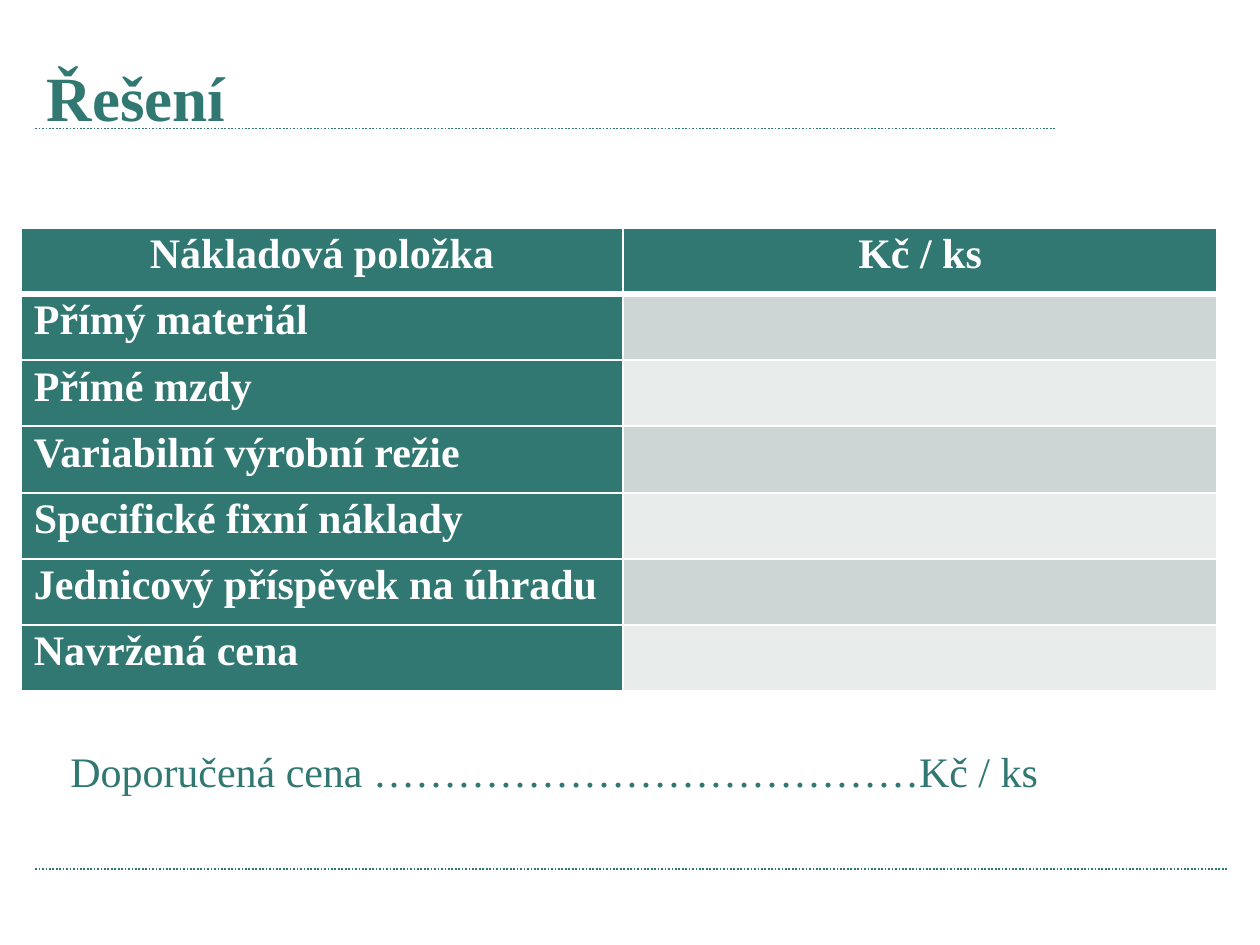
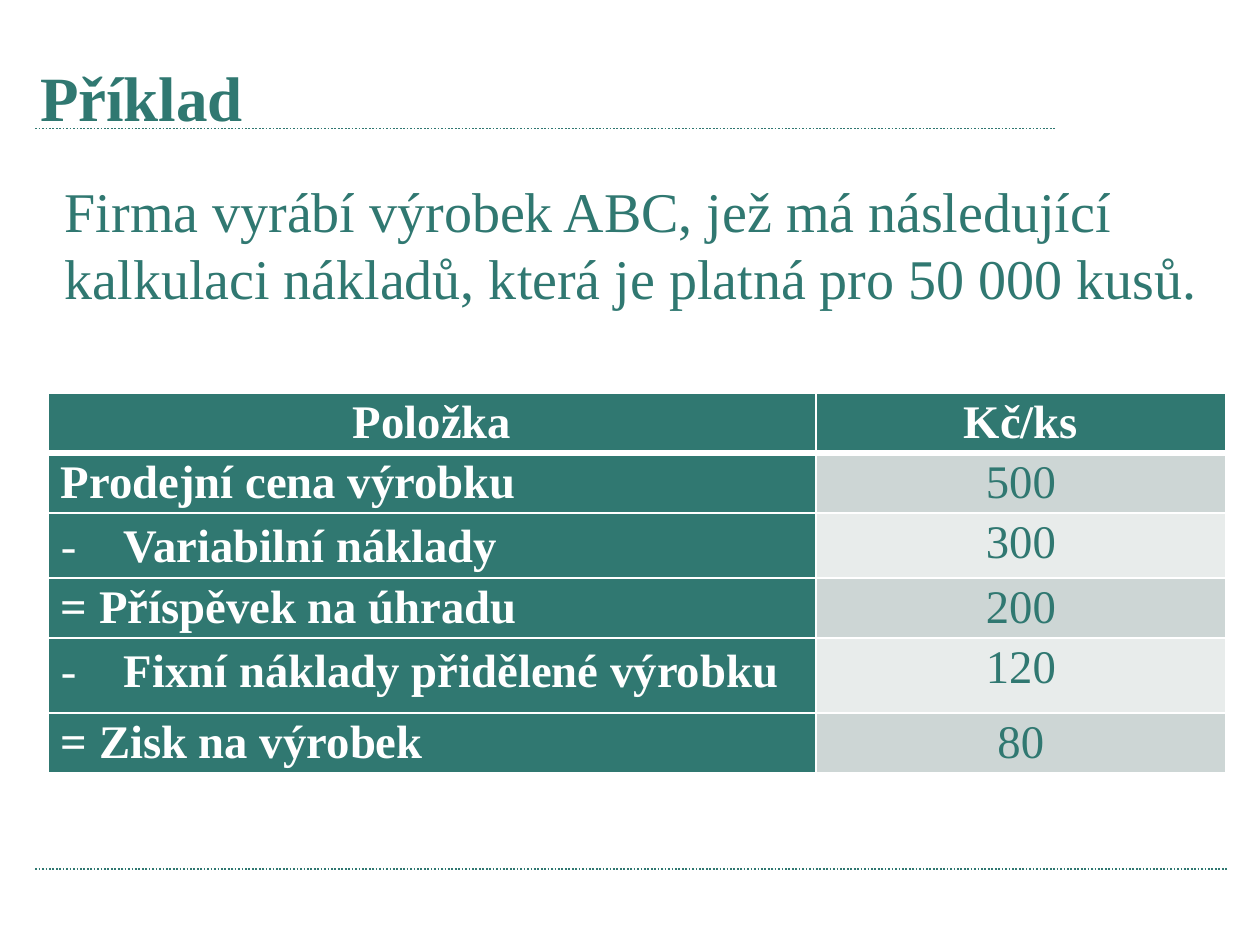
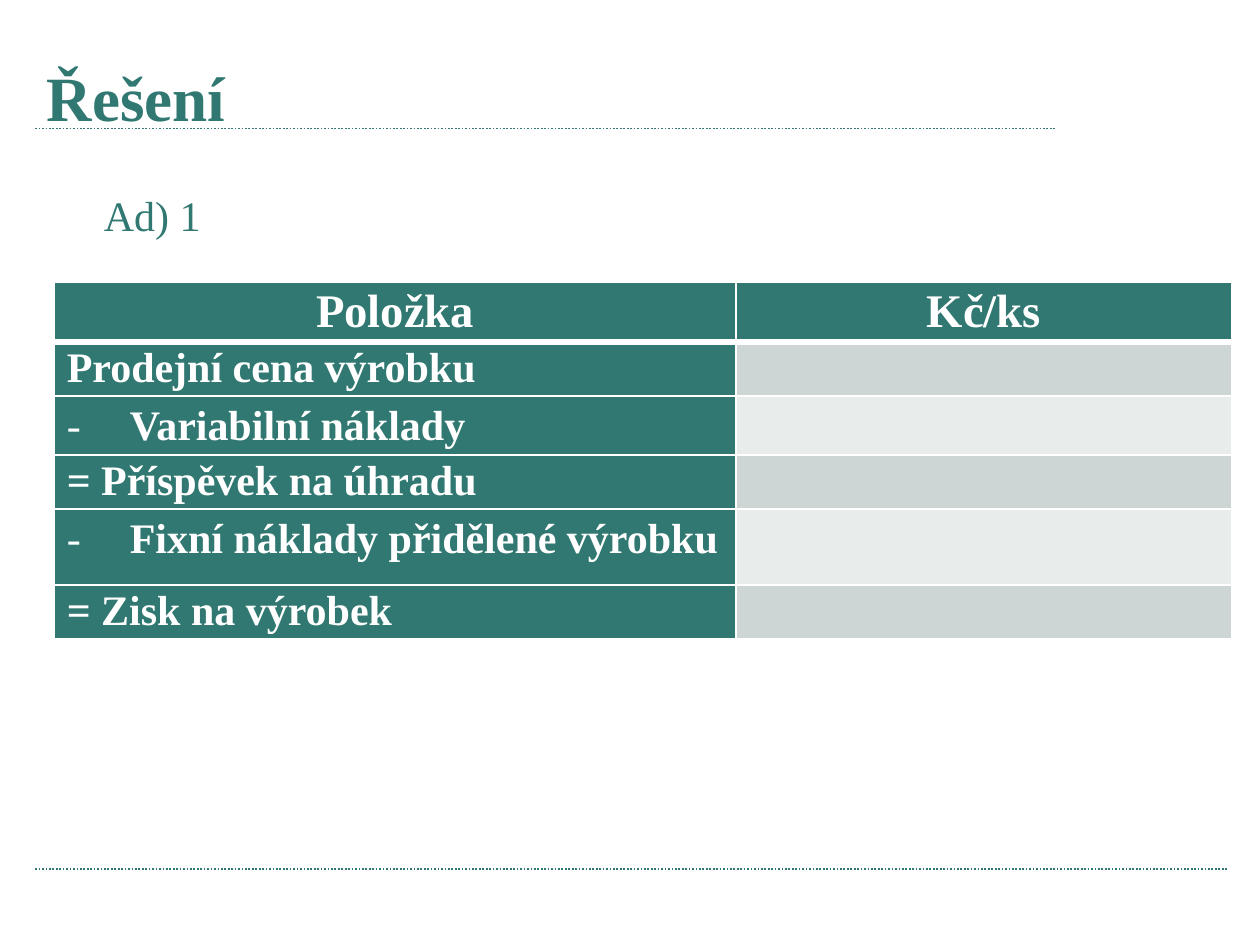
import dataclasses

import lxml.etree
import pptx
import pptx.dml.color
import pptx.enum.dml
import pptx.enum.shapes
import pptx.enum.text
import pptx.oxml.ns
import pptx.util

ALIGN = pptx.enum.text.PP_ALIGN
ANCHOR = pptx.enum.text.MSO_ANCHOR


@dataclasses.dataclass(frozen=True)
class Theme:
    font: str = "Times New Roman"
    teal: str = "307871"
    white: str = "FFFFFF"
    bands: tuple = ("CDD6D5", "E8ECEB")
    title_size: int = 27
    lead_size: int = 24
    large_size: int = 20
    body_size: int = 18
    rule_width: float = 0.75
    border_width: int = 1
    header_border_width: int = 3
    body_spacing: float = 1.0
    cell_spacing: float = 1.07
    bullet_spacing: float = 1.15
    bullet_indent: float = 3.75
    cell_margin: float = 0.75


class Deck:
    """Draws slides in one style on a grid of 75 columns by 56.25 rows."""

    columns, rows, step = 75, 56.25, 0.1

    def __init__(self, theme):
        self.theme = theme
        self.presentation = pptx.Presentation()
        self.presentation.slide_width = self.grid(self.columns)
        self.presentation.slide_height = self.grid(self.rows)
        self.slide = None

    def grid(self, count):
        return pptx.util.Inches(count * self.step)

    def color(self, value):
        return pptx.dml.color.RGBColor.from_string(value)

    def add_slide(self, title, title_left):
        self.slide = self.presentation.slides.add_slide(self.presentation.slide_layouts[6])
        self.rule(2.1, 62.9, 7.65)
        self.rule(2.1, 73.1, 51.75)
        self.text(title, title_left, 2.55, 66.1, 5.9, self.theme.title_size,
                  bold=True, anchor=ANCHOR.BOTTOM)

    def rule(self, left, right, top):
        line = self.slide.shapes.add_connector(
            pptx.enum.shapes.MSO_CONNECTOR.STRAIGHT,
            self.grid(left), self.grid(top), self.grid(right), self.grid(top))
        line.line.color.rgb = self.color(self.theme.teal)
        line.line.width = pptx.util.Pt(self.theme.rule_width)
        line.line.dash_style = pptx.enum.dml.MSO_LINE.ROUND_DOT
        properties = line._element.spPr
        lxml.etree.SubElement(properties, pptx.oxml.ns.qn("a:effectLst"))

    def style(self, paragraph, size, color, bold, spacing, alignment):
        paragraph.alignment = alignment
        paragraph.line_spacing = spacing
        for run in paragraph.runs:
            run.font.name = self.theme.font
            run.font.size = pptx.util.Pt(size)
            run.font.bold = bold
            run.font.color.rgb = self.color(color)

    def text(self, content, left, top, width, height, size, bold=False, anchor=ANCHOR.TOP):
        box = self.slide.shapes.add_textbox(*map(self.grid, (left, top, width, height)))
        frame = box.text_frame
        frame.word_wrap = True
        frame.vertical_anchor = anchor
        frame.text = content
        self.style(frame.paragraphs[0], size, self.theme.teal, bold,
                   self.theme.body_spacing, ALIGN.LEFT)

    def table(self, left, top, widths, heights, records, header_size, body_size,
              label_alignment=ALIGN.LEFT):
        frame = self.slide.shapes.add_table(
            len(heights), len(widths), self.grid(left), self.grid(top),
            self.grid(sum(widths)), self.grid(sum(heights)))
        table = frame.table
        for column, width in zip(table.columns, widths):
            column.width = self.grid(width)
        for row, height in zip(table.rows, heights):
            row.height = self.grid(height)
        for row_index, record in enumerate(records):
            header = row_index == 0
            size = header_size if header else body_size
            for column_index, content in enumerate(record):
                label = column_index == 0
                strong = header or label
                alignment = label_alignment if label and not header else ALIGN.CENTER
                cell = table.cell(row_index, column_index)
                self.borders(cell, row_index)
                cell.fill.solid()
                cell.fill.fore_color.rgb = self.color(
                    self.theme.teal if strong else self.theme.bands[(row_index - 1) % 2])
                self.fill_cell(cell, content, size, strong, alignment)

    def fill_cell(self, cell, content, size, strong, alignment):
        cell.margin_left = cell.margin_right = self.grid(self.theme.cell_margin)
        cell.margin_top = cell.margin_bottom = 0
        bulleted = content.startswith("- ")
        cell.text_frame.text = content.removeprefix("- ")
        paragraph = cell.text_frame.paragraphs[0]
        if bulleted:
            self.bullet(paragraph)
        self.style(paragraph, size, self.theme.white if strong else self.theme.teal, strong,
                   self.theme.bullet_spacing if bulleted else self.theme.cell_spacing, alignment)

    def bullet(self, paragraph):
        properties = paragraph._p.get_or_add_pPr()
        indent = self.grid(self.theme.bullet_indent)
        properties.set("marL", str(indent))
        properties.set("indent", str(-indent))
        lxml.etree.SubElement(properties, pptx.oxml.ns.qn("a:buFont"), typeface=self.theme.font)
        lxml.etree.SubElement(properties, pptx.oxml.ns.qn("a:buChar"), char="-")

    def borders(self, cell, row_index):
        properties = cell._tc.get_or_add_tcPr()
        thick_side = {0: "lnB", 1: "lnT"}.get(row_index)
        for side in ("lnL", "lnR", "lnT", "lnB"):
            width = self.theme.header_border_width if side == thick_side else self.theme.border_width
            line = lxml.etree.SubElement(
                properties, pptx.oxml.ns.qn("a:" + side), w=str(pptx.util.Pt(width)))
            fill = lxml.etree.SubElement(line, pptx.oxml.ns.qn("a:solidFill"))
            lxml.etree.SubElement(fill, pptx.oxml.ns.qn("a:srgbClr"), val=self.theme.white)


def main():
    theme = Theme()
    deck = Deck(theme)

    cost_items = ("Přímý materiál", "Přímé mzdy", "Variabilní výrobní režie",
                  "Specifické fixní náklady", "Jednicový příspěvek na úhradu", "Navržená cena")
    margin_items = ("Prodejní cena výrobku", "- Variabilní náklady", "= Příspěvek na úhradu",
                    "- Fixní náklady přidělené výrobku", "= Zisk na výrobek")
    margin_header = ("Položka", "Kč/ks")
    margin_values = ("500", "300", "200", "120", "80")

    deck.add_slide("Řešení", 1.8)
    deck.table(1.27, 13.57, (35.8, 35.4), [3.94] * 7,
               [("Nákladová položka", "Kč / ks"), *((item, "") for item in cost_items)],
               theme.body_size, theme.body_size, ALIGN.JUSTIFY)
    deck.text("Doporučená cena …………………………………Kč / ks", 3.2, 43.9, 68.1, 4, theme.body_size)

    deck.add_slide("Příklad", 1.4)
    deck.text("Firma vyrábí výrobek ABC, jež má následující kalkulaci nákladů, "
              "která je platná pro 50 000 kusů.", 2.87, 10, 70.1, 37.4, theme.lead_size)
    deck.table(2.87, 23.4, (45.7, 24.4), (3.57, 3.57, 3.85, 3.57, 4.5, 3.5),
               [margin_header, *zip(margin_items, margin_values)],
               theme.large_size, theme.large_size)

    deck.add_slide("Řešení", 1.8)
    deck.table(3.23, 16.8, (40.6, 29.5), (3.3, 3.2, 3.5, 3.2, 4.5, 3.2),
               [margin_header, *((item, "") for item in margin_items)],
               theme.large_size, theme.body_size)
    deck.text("Ad) 1", 5.2, 10.8, 11, 4, theme.body_size)

    deck.presentation.save("out.pptx")


if __name__ == "__main__":
    main()
